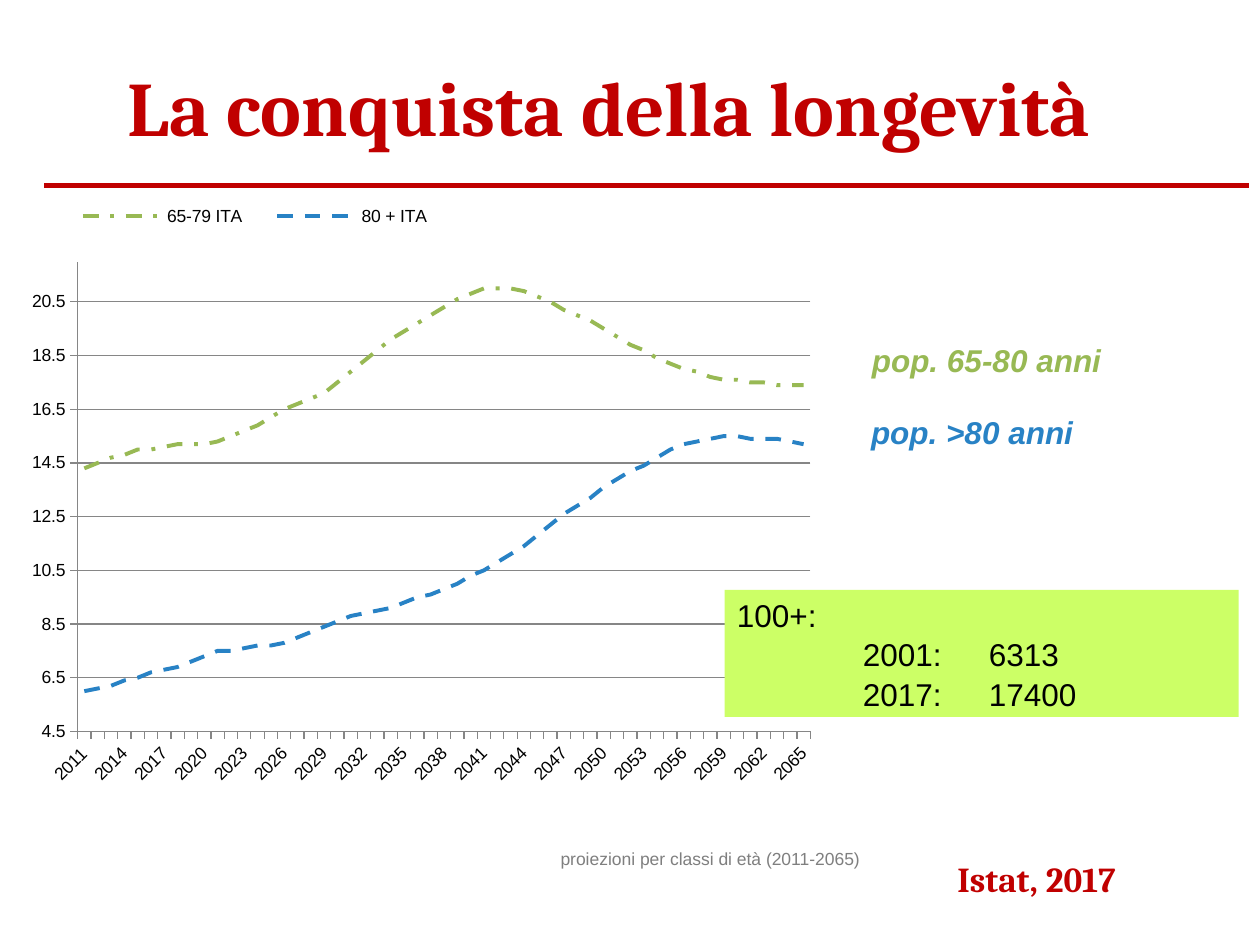
from dataclasses import dataclass

from lxml.etree import SubElement, fromstring
from pptx import Presentation
from pptx.chart.data import CategoryChartData
from pptx.dml.color import RGBColor
from pptx.enum.chart import XL_CHART_TYPE as ChartType, XL_LEGEND_POSITION as LegendPosition
from pptx.enum.chart import XL_TICK_MARK as TickMark
from pptx.enum.dml import MSO_LINE_DASH_STYLE as Dash
from pptx.enum.shapes import MSO_CONNECTOR as Connector, MSO_SHAPE as ShapeKind
from pptx.enum.text import MSO_ANCHOR as Anchor, PP_ALIGN as Align
from pptx.oxml.ns import qn
from pptx.util import Pt

COLORS = {
    "red": "C00000", "green": "98B954", "blue": "2882C5", "lime": "CCFF66",
    "gray": "7F7F7F", "axis": "868686", "black": "000000",
}
CHART_NS = "http://schemas.openxmlformats.org/drawingml/2006/chart"


@dataclass
class Label:
    text: str
    box: tuple
    size: float
    color: str
    font: str = "Arial"
    bold: bool = False
    italic: bool = False
    align: Align = Align.CENTER
    anchor: Anchor = Anchor.MIDDLE


@dataclass
class Trend:
    name: str
    color: str
    dash: Dash
    values: tuple


LABELS = [
    Label("La conquista della longevità", (8.6, 31.7, 679, 57.6), 44, "red", "Cambria", True),
    Label("pop. >80 anni", (488.9, 232.6, 133.2, 28.8), 18, "blue", bold=True, italic=True),
    Label("pop. 65-80 anni", (489.6, 191.5, 148.3, 28.8), 18, "green", bold=True, italic=True),
    Label("proiezioni per classi di età (2011-2065)", (229, 473.8, 269.3, 26.6), 10, "gray",
          align=Align.RIGHT, anchor=Anchor.BOTTOM),
    Label("Istat, 2017", (540, 486, 138.2, 31.7), 20, "red", "Cambria", True, align=Align.LEFT),
]

TRENDS = [
    Trend("65-79 ITA", "green", Dash.DASH_DOT, (
        14.3, 14.5, 14.7, 14.8, 15, 15, 15.1, 15.2, 15.2, 15.2, 15.3, 15.5, 15.7, 15.9,
        16.2, 16.5, 16.7, 16.9, 17.1, 17.5, 17.9, 18.3, 18.7, 19.1, 19.4, 19.7, 20, 20.3,
        20.6, 20.8, 21, 21, 21, 20.9, 20.7, 20.5, 20.2, 20, 19.8, 19.5, 19.2, 18.9,
        18.7, 18.4, 18.2, 18, 17.9, 17.7, 17.6, 17.6, 17.5, 17.5, 17.4, 17.4, 17.4)),
    Trend("80 + ITA", "blue", Dash.DASH, (
        6, 6.1, 6.2, 6.4, 6.5, 6.7, 6.8, 6.9, 7.1, 7.3, 7.5, 7.5, 7.6, 7.7,
        7.7, 7.8, 8, 8.2, 8.4, 8.6, 8.8, 8.9, 9, 9.1, 9.3, 9.5, 9.6, 9.8,
        10, 10.3, 10.5, 10.8, 11.1, 11.4, 11.8, 12.2, 12.6, 12.9, 13.2, 13.6, 13.9, 14.2,
        14.4, 14.7, 15, 15.2, 15.3, 15.4, 15.5, 15.5, 15.4, 15.4, 15.4, 15.3, 15.2)),
]


def rgb(name: str) -> RGBColor:
    return RGBColor.from_string(COLORS[name])


def points(box: tuple) -> list:
    return [Pt(length) for length in box]


def add_run(paragraph, text: str, size: float, color: str, font: str = "Arial") -> object:
    run = paragraph.add_run()
    run.text = text
    run.font.size = Pt(size)
    run.font.name = font
    run.font.color.rgb = rgb(color)
    return run


def add_label(slide, label: Label) -> None:
    frame = slide.shapes.add_textbox(*points(label.box)).text_frame
    frame.word_wrap = True
    frame.vertical_anchor = label.anchor
    paragraph = frame.paragraphs[0]
    paragraph.alignment = label.align
    run = add_run(paragraph, label.text, label.size, label.color, label.font)
    run.font.bold = label.bold
    run.font.italic = label.italic


def manual_layout(target: str, x: float, y: float, width: float, height: float):
    inner = '<c:layoutTarget val="inner"/>' if target == "plot" else ""
    return fromstring(
        f'<c:layout xmlns:c="{CHART_NS}"><c:manualLayout>{inner}'
        '<c:xMode val="edge"/><c:yMode val="edge"/>'
        f'<c:x val="{x}"/><c:y val="{y}"/><c:w val="{width}"/><c:h val="{height}"/>'
        '</c:manualLayout></c:layout>')


def set_layout(element, layout, position: int) -> None:
    for old in element.findall(qn("c:layout")):
        element.remove(old)
    element.insert(position, layout)


def style_axis(axis) -> None:
    axis.major_tick_mark = TickMark.OUTSIDE
    axis.minor_tick_mark = TickMark.NONE
    axis.tick_labels.font.size = Pt(10)
    axis.format.line.color.rgb = rgb("axis")
    axis.format.line.width = Pt(0.75)


def add_population_chart(slide) -> None:
    data = CategoryChartData(number_format="0.0")
    data.categories = [str(year) for year in range(2011, 2066)]
    for trend in TRENDS:
        data.add_series(trend.name, trend.values)
    chart = slide.shapes.add_chart(
        ChartType.LINE, *points((12.2, 94.3, 460.1, 367.9)), data).chart
    chart.has_title = False
    chart.font.size = Pt(10)
    chart.font.name = "Arial"
    chart.font.color.rgb = rgb("black")

    chart.has_legend = True
    chart.legend.position = LegendPosition.TOP
    chart.legend.include_in_layout = False
    chart.legend.font.size = Pt(10)
    set_layout(chart.legend._element, manual_layout("legend", 0.04, 0.05, 0.5, 0.06), 1)
    plot = chart.plots[0]
    plot.vary_by_categories = False
    set_layout(plot._element.getparent(), manual_layout("plot", 0.07, 0.15, 0.91, 0.73), 0)

    years = chart.category_axis
    style_axis(years)
    years.tick_labels.font._element.getparent().getparent().getparent().find(
        qn("a:bodyPr")).set("rot", "-2700000")
    no_multi_level = years._element.find(qn("c:noMultiLvlLbl"))
    for tag, value in (("c:tickLblSkip", "3"), ("c:tickMarkSkip", "1")):
        skip = SubElement(years._element, qn(tag))
        skip.set("val", value)
        no_multi_level.addprevious(skip)

    share = chart.value_axis
    style_axis(share)
    share.minimum_scale = 4.5
    share.maximum_scale = 22
    share.major_unit = 2
    share.tick_labels.number_format = "0.0"
    share.tick_labels.number_format_is_linked = False
    share.has_major_gridlines = True
    share.major_gridlines.format.line.color.rgb = rgb("axis")
    share.major_gridlines.format.line.width = Pt(0.75)

    for series, trend in zip(plot.series, TRENDS):
        series.smooth = False
        series.format.line.color.rgb = rgb(trend.color)
        series.format.line.width = Pt(2.25)
        series.format.line.dash_style = trend.dash


def add_centenarians_box(slide) -> None:
    shape = slide.shapes.add_shape(ShapeKind.RECTANGLE, *points((414, 337, 293.8, 72.7)))
    shape.shadow.inherit = False
    shape.fill.solid()
    shape.fill.fore_color.rgb = rgb("lime")
    shape.line.fill.background()
    frame = shape.text_frame
    frame.word_wrap = True
    frame.vertical_anchor = Anchor.MIDDLE
    for index, text in enumerate(("100+:", "2001: \t6313", "2017: \t17400")):
        paragraph = frame.add_paragraph() if index else frame.paragraphs[0]
        paragraph.alignment = Align.LEFT
        paragraph.line_spacing = 1.05
        if index:
            paragraph._p.get_or_add_pPr().set("marL", str(Pt(72)))
        add_run(paragraph, text, 18, "black")


def add_title_rule(slide) -> None:
    rule = slide.shapes.add_connector(
        Connector.STRAIGHT, *points((25.2, 105.8, 713.5, 105.8)))
    rule.line.color.rgb = rgb("red")
    rule.line.width = Pt(3)
    SubElement(rule._element.spPr, qn("a:effectLst"))


def main() -> None:
    presentation = Presentation()
    presentation.slide_width, presentation.slide_height = Pt(720), Pt(540)
    slide = presentation.slides.add_slide(presentation.slide_layouts[6])
    add_population_chart(slide)
    for label in LABELS:
        add_label(slide, label)
    add_centenarians_box(slide)
    add_title_rule(slide)
    presentation.save("out.pptx")


if __name__ == "__main__":
    main()
